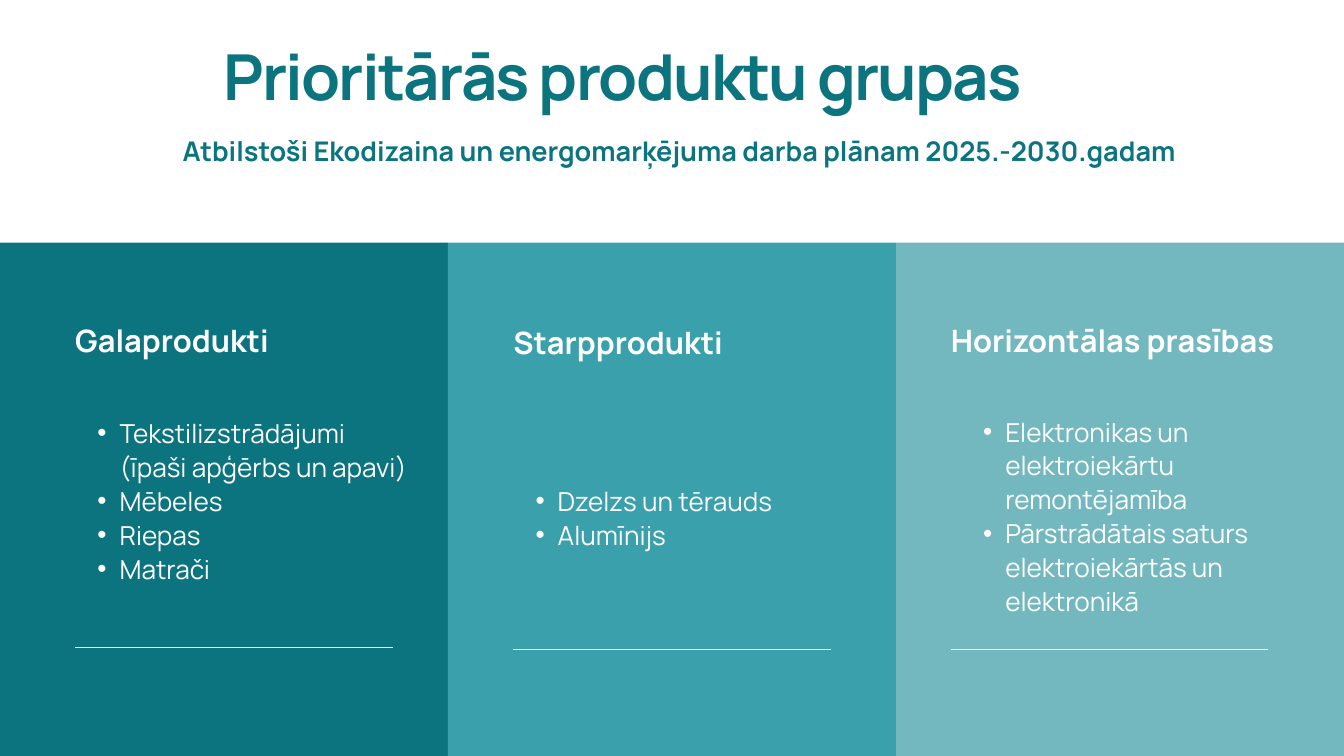
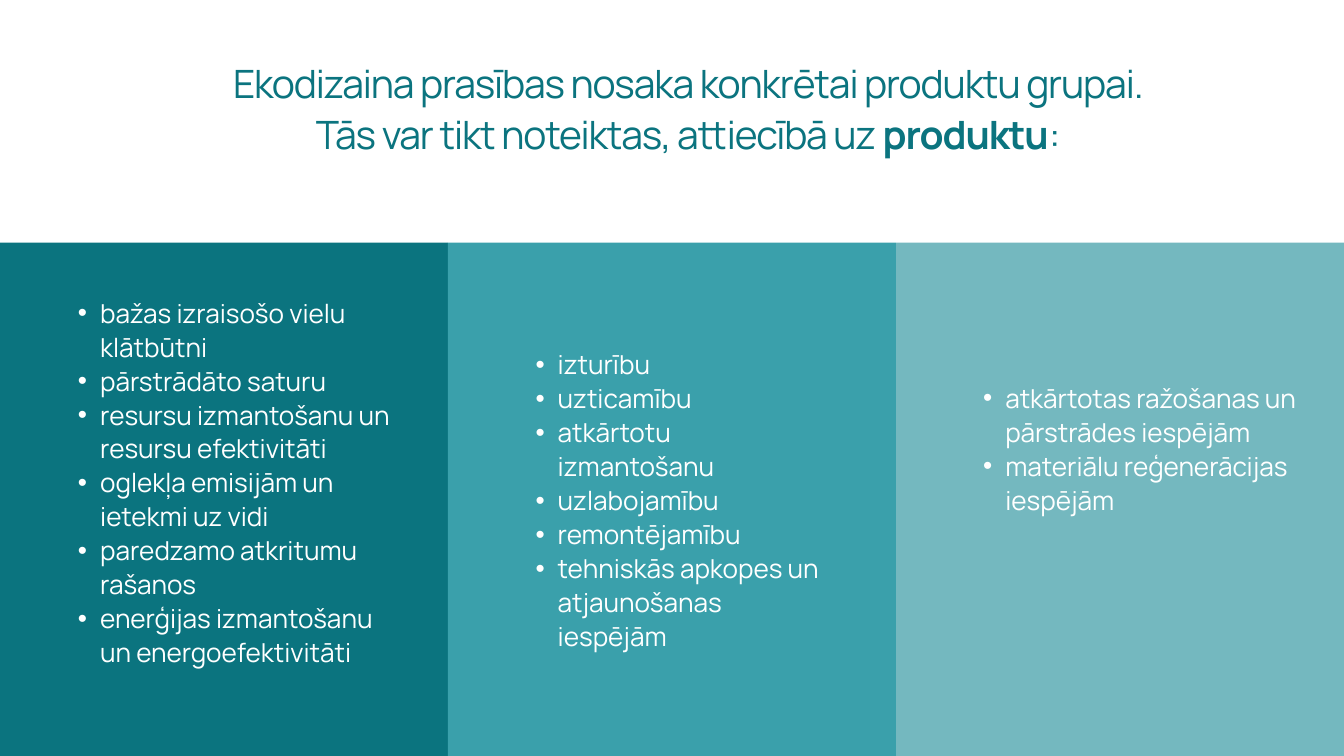
from lxml import etree
from pptx import Presentation
from pptx.dml.color import RGBColor
from pptx.enum.shapes import MSO_CONNECTOR, MSO_SHAPE
from pptx.enum.text import MSO_ANCHOR, MSO_AUTO_SIZE, PP_ALIGN
from pptx.oxml.ns import qn
from pptx.util import Pt

LEFT, CENTER = PP_ALIGN.LEFT, PP_ALIGN.CENTER
TOP, NO_FIT = MSO_ANCHOR.TOP, MSO_AUTO_SIZE.NONE
RECTANGLE, STRAIGHT = MSO_SHAPE.RECTANGLE, MSO_CONNECTOR.STRAIGHT

# Shared style
TEAL = RGBColor(0x0B, 0x74, 0x7F)
MID_TEAL = RGBColor(0x3A, 0xA0, 0xAB)
PALE_TEAL = RGBColor(0x74, 0xB8, 0xBF)
WHITE = RGBColor(0xFF, 0xFF, 0xFF)
FONT = "Manrope"
PAGE_WIDTH, PAGE_HEIGHT = 1440, 810
PANEL_TOP = 260
PANEL_COLORS = (TEAL, MID_TEAL, PALE_TEAL)
BULLET_INDENT, BULLET_HANG = 47.52, 23.76
RULE_WIDTH = 340

# Content: a paragraph is a list of (text, bold) spans, a place is left, top, width, height
GROUPS_TITLE = [[("Prioritārās produktu grupas", True)]]
GROUPS_SUBTITLE = [[("Atbilstoši Ekodizaina un energomarķējuma darba plānam 2025.-2030.gadam", True)]]
GROUPS = [
    {"heading": "Galaprodukti", "heading_place": (80.64, 344.2, 340, 42), "rule_top": 694.1,
     "place": (80.64, 444.2, 360.7, 217.4),
     "items": ["Tekstilizstrādājumi (īpaši apģērbs un apavi)", "Mēbeles", "Riepas", "Matrači"]},
    {"heading": "Starpprodukti", "heading_place": (550.1, 346.3, 340, 42), "rule_top": 695.5,
     "place": (550.1, 517, 340, 73.4),
     "items": ["Dzelzs un tērauds", "Alumīnijs"]},
    {"heading": "Horizontālas prasības", "heading_place": (1018.8, 344.2, 385.2, 42), "rule_top": 696.2,
     "place": (1029.6, 442.8, 373.7, 253.4),
     "items": ["Elektronikas un elektroiekārtu remontējamība",
               "Pārstrādātais saturs elektroiekārtās un elektronikā"]},
]

PRODUCT_TITLE = [
    [("Ekodizaina prasības nosaka konkrētai produktu grupai.", False)],
    [("Tās var tikt noteiktas, attiecībā uz ", False), ("produktu", True), (":", False)],
]
REQUIREMENTS = [
    {"place": (59.8, 315.4, 360.7, 433.4),
     "items": ["bažas izraisošo vielu klātbūtni", "pārstrādāto saturu",
               "resursu izmantošanu un resursu efektivitāti",
               "oglekļa emisijām un ietekmi uz vidi",
               "paredzamo atkritumu rašanos",
               "enerģijas izmantošanu un energoefektivitāti"]},
    {"place": (550.1, 370.8, 340, 325.4),
     "items": ["izturību", "uzticamību", "atkārtotu izmantošanu", "uzlabojamību",
               "remontējamību", "tehniskās apkopes un atjaunošanas iespējām"]},
    {"place": (1029.6, 406.8, 373.7, 253.4),
     "items": ["atkārtotas ražošanas un pārstrādes iespējām",
               "materiālu reģenerācijas iespējām"]},
]


def add_bullet(para):
    properties = para._p.get_or_add_pPr()
    properties.set("marL", str(Pt(BULLET_INDENT)))
    properties.set("indent", str(-Pt(BULLET_HANG)))
    font = etree.SubElement(properties, qn("a:buFont"))
    font.set("typeface", "Arial")
    etree.SubElement(properties, qn("a:buChar")).set("char", "•")


def write(box, place, paragraphs, size, leading, color, align=LEFT, tracking=0, bullets=False):
    """Place a text shape and fill it with paragraphs of spans."""
    box.left, box.top, box.width, box.height = map(Pt, place)
    frame = box.text_frame
    frame.word_wrap = True
    frame.auto_size = NO_FIT
    frame.vertical_anchor = TOP
    frame.margin_left = frame.margin_top = frame.margin_right = frame.margin_bottom = 0
    for index, spans in enumerate(paragraphs):
        para = frame.add_paragraph() if index else frame.paragraphs[0]
        if bullets:
            add_bullet(para)
        para.alignment = align
        para.line_spacing = Pt(leading)
        for text, bold in spans:
            span = para.add_run()
            span.text = text
            span.font.name = FONT
            span.font.size = Pt(size)
            span.font.bold = bold
            span.font.color.rgb = color
            if tracking:
                span._r.get_or_add_rPr().set("spc", str(round(tracking * 100)))


def add_text(page, place, paragraphs, size, leading, color, **options):
    box = page.shapes.add_textbox(*map(Pt, place))
    write(box, place, paragraphs, size, leading, color, **options)


def add_rule(page, left, top):
    rule = page.shapes.add_connector(STRAIGHT, Pt(left), Pt(top), Pt(left + RULE_WIDTH), Pt(top))
    rule.line.color.rgb = WHITE
    rule.line.width = Pt(0.75)
    etree.SubElement(rule._element.spPr, qn("a:effectLst"))


def add_page(deck, columns):
    """Add a page with three colour panels, each holding a bullet list."""
    page = deck.slides.add_slide(deck.slide_layouts[5])
    page.background.fill.solid()
    page.background.fill.fore_color.rgb = WHITE
    width = PAGE_WIDTH / len(PANEL_COLORS)
    for index, color in enumerate(PANEL_COLORS):
        panel = page.shapes.add_shape(RECTANGLE, Pt(index * width), Pt(PANEL_TOP),
                                      Pt(width), Pt(PAGE_HEIGHT - PANEL_TOP))
        panel.shadow.inherit = False
        panel.fill.solid()
        panel.fill.fore_color.rgb = color
        panel.line.fill.background()
    for column in columns:
        items = [[(item, False)] for item in column["items"]]
        add_text(page, column["place"], items, 28, 36.4, WHITE, bullets=True)
    return page


def main():
    deck = Presentation()
    deck.slide_width, deck.slide_height = Pt(PAGE_WIDTH), Pt(PAGE_HEIGHT)

    # Priority product groups
    page = add_page(deck, GROUPS)
    write(page.shapes.title, (239.8, 33.1, 1142.6, 193), GROUPS_TITLE, 67.9, 88.3, TEAL, tracking=-2)
    add_text(page, (157, 141.1, 1142.6, 110.2), GROUPS_SUBTITLE, 29, 37.7, TEAL, align=CENTER)
    for group in GROUPS:
        add_text(page, group["heading_place"], [[(group["heading"], True)]], 33, 40.2, WHITE)
        add_rule(page, group["heading_place"][0], group["rule_top"])

    # Requirements for a product
    page = add_page(deck, REQUIREMENTS)
    write(page.shapes.title, (115.9, 59.8, 1242.7, 110.9), PRODUCT_TITLE, 41.8, 54.3, TEAL,
          align=CENTER, tracking=-1.2)

    deck.save("out.pptx")


if __name__ == "__main__":
    main()
